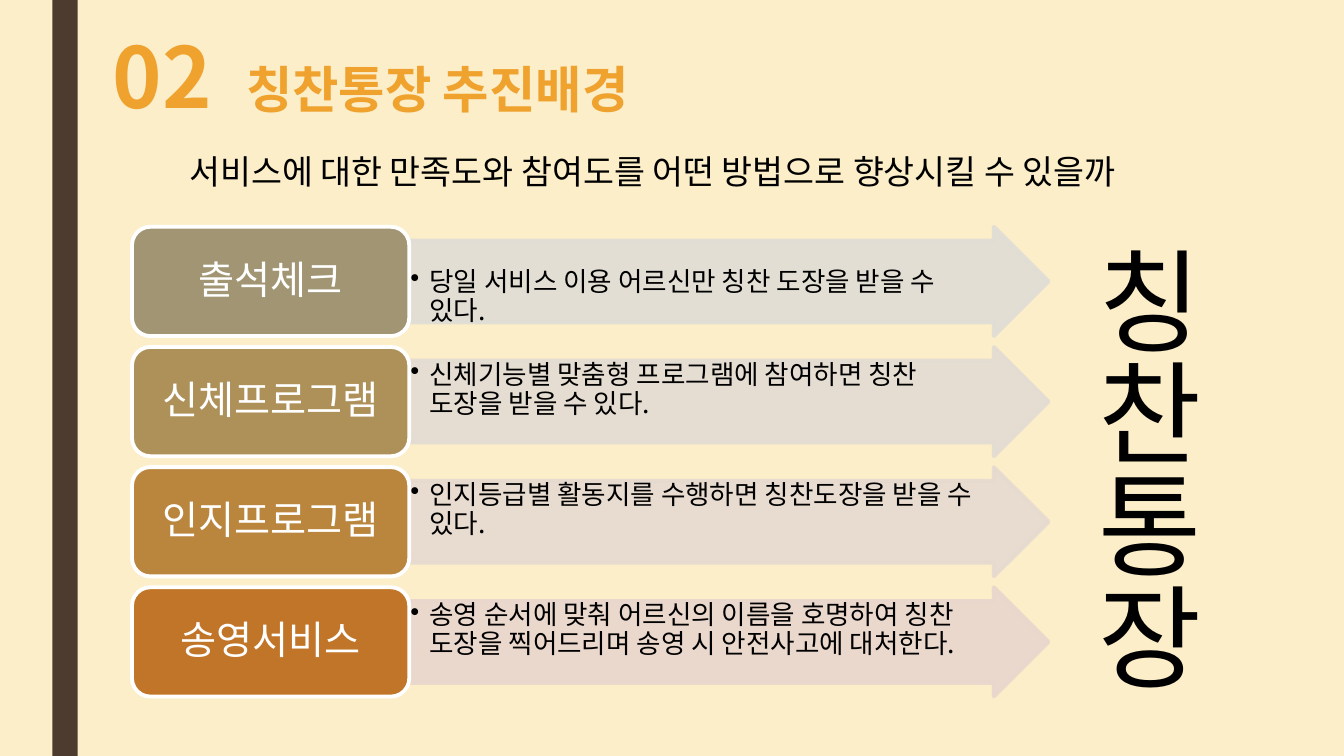
from lxml import etree
from pptx import Presentation
from pptx import util as u
from pptx.dml.color import RGBColor
from pptx.enum import shapes, text
from pptx.oxml.ns import qn

WIDTH, HEIGHT = 13.33, 7.5
FONT = "Noto Sans CJK KR"
COLORS = {"background": "FBEEC9", "bar": "4E3B30", "accent": "F0A22E",
          "text": "000000", "white": "FFFFFF"}
# label, description, label colour, arrow colour, top inset of the description
STEPS = [
    ("출석체크", "당일 서비스 이용 어르신만 칭찬 도장을 받을 수 있다.",
     "A19574", "E0DDD6", 0.28),
    ("신체프로그램", "신체기능별 맞춤형 프로그램에 참여하면 칭찬 도장을 받을 수 있다.",
     "AE9159", "E3DCD3", 0.01),
    ("인지프로그램", "인지등급별 활동지를 수행하면 칭찬도장을 받을 수 있다.",
     "BA863E", "E6DAD0", 0.01),
    ("송영서비스", "송영 순서에 맞춰 어르신의 이름을 호명하여 칭찬 도장을 찍어드리며 송영 시 안전사고에 대처한다.",
     "C17529", "E9D6CD", 0.01),
]


def rgb(color):
    return RGBColor.from_string(color)


def inches(box):
    return [u.Inches(length) for length in box]


def add_run(paragraph, words, size, color, bold=False):
    run = paragraph.add_run()
    run.text = words
    for name, value in {"size": u.Pt(size), "bold": bold, "name": FONT}.items():
        setattr(run.font, name, value)
    run.font.color.rgb = rgb(color)
    etree.SubElement(run.font._element, qn("a:ea"), typeface=FONT)


def format_frame(frame, insets=(0.1, 0.05, 0.1, 0.05), **values):
    sides = ("margin_left", "margin_top", "margin_right", "margin_bottom")
    values.update(zip(sides, inches(insets)))
    for name, value in values.items():
        setattr(frame, name, value)


def add_filled(slide, kind, box, fill, line=None, alpha=None):
    shape = slide.shapes.add_shape(kind, *inches(box))
    shape.shadow.inherit = False
    shape.fill.solid()
    shape.fill.fore_color.rgb = rgb(fill)
    if line:
        shape.line.color.rgb = rgb(line)
        shape.line.width = u.Pt(2.75)
    else:
        shape.line.fill.background()
    if alpha:
        for color in shape._element.spPr.iter(qn("a:srgbClr")):
            etree.SubElement(color, qn("a:alpha"), val=str(alpha * 1000))
    return shape


def add_line_of_text(slide, box, words, size, vertical=False):
    frame = slide.shapes.add_textbox(*inches(box)).text_frame
    format_frame(frame, word_wrap=False, auto_size=text.MSO_AUTO_SIZE.SHAPE_TO_FIT_TEXT)
    if vertical:
        frame._txBody.bodyPr.set("vert", "eaVert")
    add_run(frame.paragraphs[0], words, size, COLORS["text"])


def add_title(slide, box):
    title = slide.shapes.title
    title.left, title.top, title.width, title.height = inches(box)
    frame = title.text_frame
    format_frame(frame, word_wrap=False, vertical_anchor=text.MSO_ANCHOR.TOP,
                 auto_size=text.MSO_AUTO_SIZE.SHAPE_TO_FIT_TEXT)
    paragraph = frame.paragraphs[0]
    paragraph.alignment = text.PP_ALIGN.LEFT
    # Tab stop between the number and the heading
    tabs = etree.SubElement(paragraph._p.get_or_add_pPr(), qn("a:tabLst"))
    etree.SubElement(tabs, qn("a:tab"), pos=str(u.Inches(1.32)), algn="l")
    add_run(paragraph, "02", 60, COLORS["accent"], bold=True)
    add_run(paragraph, "\t칭찬통장 추진배경", 36, COLORS["accent"], bold=True)


def add_step(slide, box, label, description, label_color, arrow_color, top_inset):
    left, top, width, height = box
    label_width = width * 0.3025

    # Arrow with the bulleted description
    arrow = add_filled(slide, shapes.MSO_SHAPE.RIGHT_ARROW,
                       (left + label_width, top, width - label_width, height),
                       arrow_color, arrow_color, alpha=90)
    arrow.adjustments[0], arrow.adjustments[1] = 0.75, 0.5
    format_frame(arrow.text_frame, (0.01, top_inset, 0.28, 0.01), word_wrap=True,
                 vertical_anchor=text.MSO_ANCHOR.TOP)
    paragraph = arrow.text_frame.paragraphs[0]
    paragraph.alignment = text.PP_ALIGN.LEFT
    paragraph.line_spacing = 0.9
    properties = paragraph._p.get_or_add_pPr()
    indent = u.Inches(0.19)
    properties.set("marL", str(indent))
    properties.set("indent", str(-indent))
    etree.SubElement(properties, qn("a:buChar"), char="•")
    add_run(paragraph, description, 19, COLORS["text"])

    # Rounded label
    card = add_filled(slide, shapes.MSO_SHAPE.ROUNDED_RECTANGLE,
                      (left, top, label_width, height), label_color, COLORS["white"])
    format_frame(card.text_frame, (0.12, 0.06, 0.12, 0.06), word_wrap=True,
                 vertical_anchor=text.MSO_ANCHOR.MIDDLE)
    paragraph = card.text_frame.paragraphs[0]
    paragraph.alignment = text.PP_ALIGN.CENTER
    paragraph.line_spacing = 0.9
    add_run(paragraph, label, 28, COLORS["white"])


def add_steps(slide, box):
    left, top, width, height = box
    # Each gap is a tenth of a row
    row = height / (len(STEPS) * 1.1 - 0.1)
    for index, step in enumerate(STEPS):
        add_step(slide, (left, top + index * row * 1.1, width, row), *step)


def main():
    presentation = Presentation()
    presentation.slide_width, presentation.slide_height = inches((WIDTH, HEIGHT))
    slide = presentation.slides.add_slide(presentation.slide_layouts[5])

    # Background and side bar
    slide.background.fill.solid()
    slide.background.fill.fore_color.rgb = rgb(COLORS["background"])
    add_filled(slide, shapes.MSO_SHAPE.RECTANGLE, (0.52, 0, 0.25, HEIGHT), COLORS["bar"])

    # Heading, question, steps and vertical result
    add_title(slide, (1.02, 0.19, 5.54, 1.11))
    add_line_of_text(slide, (1.78, 1.45, 10.52, 0.5),
                     "서비스에 대한 만족도와 참여도를 어떤 방법으로 향상시킬 수 있을까", 24)
    add_steps(slide, (1.31, 2.25, 9.09, 4.66))
    add_line_of_text(slide, (10.53, 2.33, 1.55, 4.59), "칭찬통장", 80, vertical=True)

    presentation.save("out.pptx")


if __name__ == "__main__":
    main()
